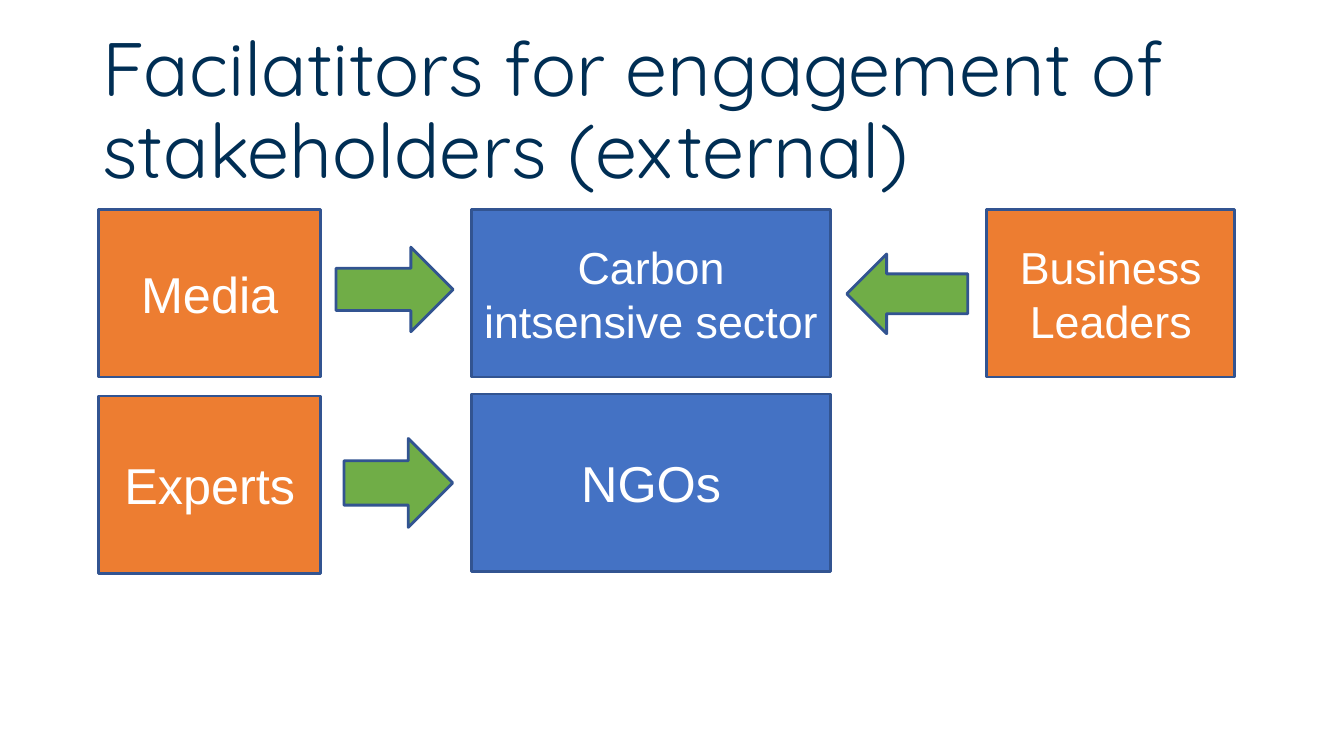
from pptx import Presentation
from pptx.dml.color import RGBColor
from pptx.enum import shapes, text
from pptx.util import Cm, Pt

COLORS = {
    "title": "002E54",
    "facilitator": "ED7D31",
    "stakeholder": "4472C4",
    "arrow": "70AD47",
    "outline": "325491",
    "label": "FFFFFF",
}
LEFT_COLUMN = (2.49, 5.59)
MIDDLE_COLUMN = (11.89, 9.04)
RIGHT_COLUMN = (24.87, 6.25)
TOP_ROW = (5.28, 4.22)
BOTTOM_HEIGHT = 4.47


def color(name):
    return RGBColor.from_string(COLORS[name])


def format_text(text_frame, font_name, size, color_name):
    text_frame.word_wrap = True
    text_frame.vertical_anchor = text.MSO_ANCHOR.MIDDLE
    for paragraph in text_frame.paragraphs:
        for run in paragraph.runs:
            run.font.name = font_name
            run.font.size = Pt(size)
            run.font.color.rgb = color(color_name)


def add_title(slide, wording):
    title = slide.shapes.title
    title.left, title.top = Cm(2.33), Cm(1.01)
    title.width, title.height = Cm(29.21), Cm(3.68)
    text_frame = title.text_frame
    text_frame.text = wording
    text_frame.auto_size = text.MSO_AUTO_SIZE.NONE
    paragraph = text_frame.paragraphs[0]
    paragraph.alignment = text.PP_ALIGN.LEFT
    paragraph.line_spacing = 0.9
    format_text(text_frame, "Quicksand", 54, "title")


def add_filled_shape(slide, kind, left, top, width, height, fill):
    shape = slide.shapes.add_shape(kind, Cm(left), Cm(top), Cm(width), Cm(height))
    shape.shadow.inherit = False
    shape.fill.solid()
    shape.fill.fore_color.rgb = color(fill)
    shape.line.color.rgb = color("outline")
    shape.line.width = Pt(2)
    return shape


def add_box(slide, wording, column, row, fill, size):
    """Add a labelled box; column is (left, width) and row is (top, height)."""
    (left, width), (top, height) = column, row
    shape = add_filled_shape(slide, shapes.MSO_SHAPE.RECTANGLE,
                             left, top, width, height, fill)
    shape.text_frame.text = wording
    shape.text_frame.paragraphs[0].alignment = text.PP_ALIGN.CENTER
    format_text(shape.text_frame, "Arial", size, "label")


def main():
    presentation = Presentation()
    presentation.slide_width, presentation.slide_height = Cm(33.87), Cm(19.05)
    slide = presentation.slides.add_slide(presentation.slide_layouts[5])
    add_title(slide, "Facilatitors for engagement of stakeholders (external)")

    boxes = [
        ("Media", LEFT_COLUMN, TOP_ROW, "facilitator", 36),
        ("Carbon intsensive sector", MIDDLE_COLUMN, TOP_ROW, "stakeholder", 32),
        ("Business Leaders", RIGHT_COLUMN, TOP_ROW, "facilitator", 32),
        ("Experts", LEFT_COLUMN, (9.98, BOTTOM_HEIGHT), "facilitator", 36),
        ("NGOs", MIDDLE_COLUMN, (9.93, BOTTOM_HEIGHT), "stakeholder", 36),
    ]
    for box in boxes:
        add_box(slide, *box)

    arrows = [
        (shapes.MSO_SHAPE.RIGHT_ARROW, 8.47, 6.23, 2.95, 2.13),
        (shapes.MSO_SHAPE.LEFT_ARROW, 21.34, 6.4, 3.05, 2.01),
        (shapes.MSO_SHAPE.RIGHT_ARROW, 8.67, 11.05, 2.74, 2.24),
    ]
    for arrow in arrows:
        add_filled_shape(slide, *arrow, "arrow")

    presentation.save("out.pptx")


if __name__ == "__main__":
    main()
